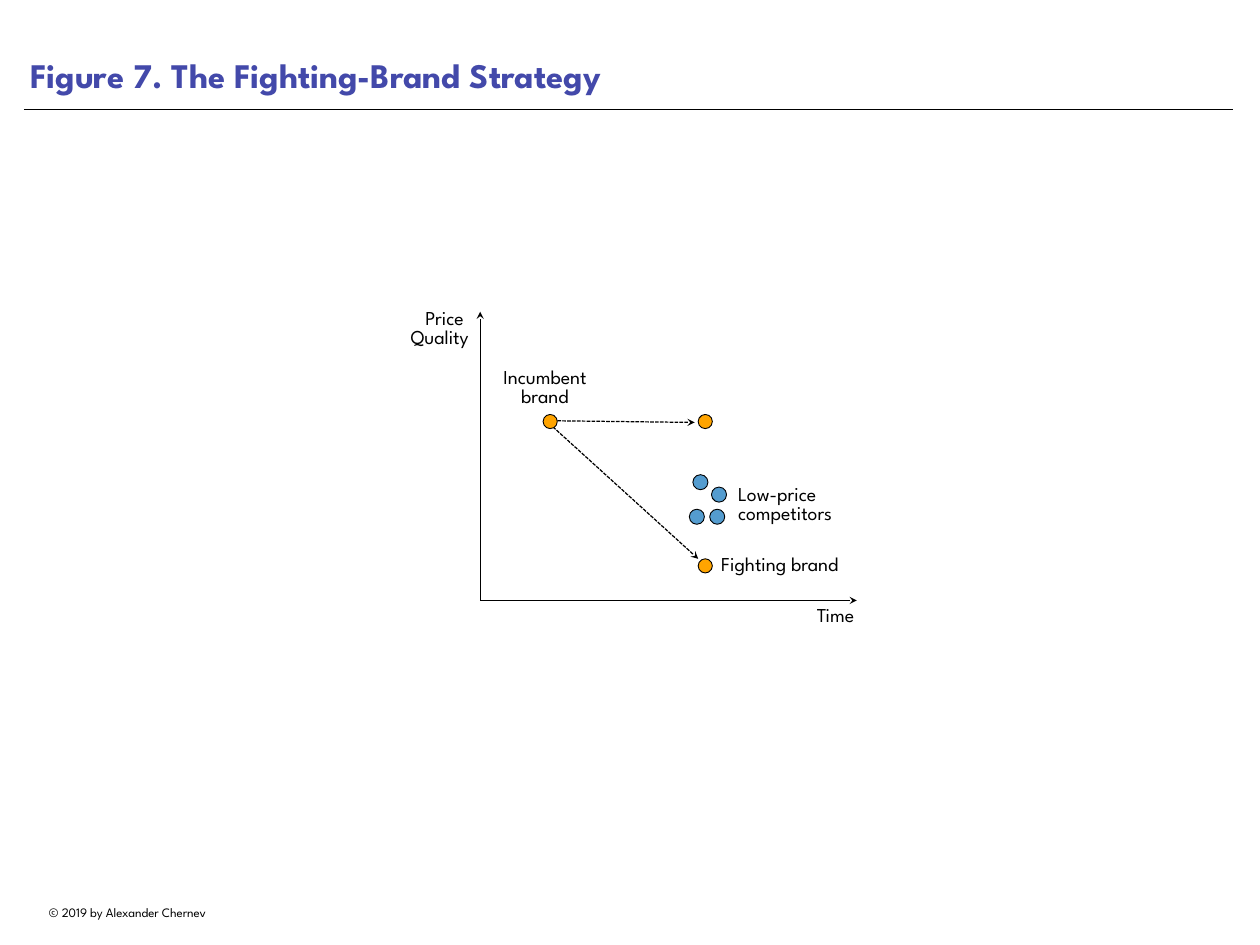
"""Build the fighting-brand strategy slide: a price-quality over time diagram."""
from dataclasses import dataclass

from lxml import etree
from pptx import Presentation
from pptx.dml.color import RGBColor
from pptx.enum.dml import MSO_LINE
from pptx.enum.shapes import MSO_CONNECTOR, MSO_SHAPE
from pptx.enum.text import MSO_ANCHOR, MSO_AUTO_SIZE, PP_ALIGN
from pptx.oxml.ns import qn
from pptx.util import Inches, Pt


@dataclass(frozen=True)
class Theme:
    font: str = "League Spartan"
    black: RGBColor = RGBColor(0x00, 0x00, 0x00)
    title_color: RGBColor = RGBColor(0x43, 0x49, 0xAA)
    brand_color: RGBColor = RGBColor(0xFF, 0xA4, 0x00)
    competitor_color: RGBColor = RGBColor(0x54, 0x9C, 0xCF)
    title_size: float = 28
    label_size: float = 16
    footer_size: float = 10.5


THEME = Theme()


def write_text(shape, text, size=THEME.label_size, color=THEME.black, bold=False,
               align=PP_ALIGN.LEFT, anchor=MSO_ANCHOR.TOP, spacing=0.8,
               inset=0, wrap=True):
    frame = shape.text_frame
    frame.auto_size = MSO_AUTO_SIZE.NONE
    frame.word_wrap = wrap
    frame.vertical_anchor = anchor
    frame.margin_left = frame.margin_right = Inches(inset)
    frame.margin_top = frame.margin_bottom = Inches(inset)
    frame.text = text
    for paragraph in frame.paragraphs:
        paragraph.alignment = align
        paragraph.line_spacing = spacing
        paragraph.space_before = Pt(0)
        font = paragraph.runs[0].font
        font.name = THEME.font
        font.size = Pt(size)
        font.bold = bold
        font.color.rgb = color


def draw_line(slide, start, end, width=1, dashed=False, arrow=True):
    connector = slide.shapes.add_connector(
        MSO_CONNECTOR.STRAIGHT, *map(Inches, start + end))
    connector.line.color.rgb = THEME.black
    connector.line.width = Pt(width)
    if dashed:
        connector.line.dash_style = MSO_LINE.SQUARE_DOT
    properties = connector._element.spPr
    if arrow:
        outline = properties.find(qn("a:ln"))
        etree.SubElement(outline, qn("a:tailEnd"), type="stealth")
    etree.SubElement(properties, qn("a:effectLst"))


presentation = Presentation()
presentation.slide_width = Inches(14.22)
presentation.slide_height = Inches(10.67)
slide = presentation.slides.add_slide(presentation.slide_layouts[5])

title = slide.shapes.title
title.left, title.top = Inches(0.27), Inches(0)
title.width, title.height = Inches(13.64), Inches(1.15)
write_text(title, "Figure 7. The Fighting-Brand Strategy", size=THEME.title_size,
           color=THEME.title_color, bold=True, anchor=MSO_ANCHOR.BOTTOM,
           spacing=1, inset=0.07)
draw_line(slide, (0.27, 1.24), (13.92, 1.24), width=0.5, arrow=False)

footer = slide.shapes.add_textbox(
    Inches(0.27), Inches(10.16), Inches(2.34), Inches(0.28))
write_text(footer, "© 2019 by Alexander Chernev", size=THEME.footer_size,
           align=PP_ALIGN.CENTER, spacing=1, inset=0.05, wrap=False)

origin = (5.42, 6.78)
draw_line(slide, origin, (5.42, 3.52))
draw_line(slide, origin, (9.67, 6.78))

labels = [
    ("Time", (8.92, 6.86, 0.72, 0.41), PP_ALIGN.RIGHT, MSO_ANCHOR.TOP),
    ("Price \nQuality", (4.43, 3.51, 0.86, 0.67), PP_ALIGN.RIGHT, MSO_ANCHOR.TOP),
    ("Incumbent brand", (5.42, 4.05, 1.46, 0.67), PP_ALIGN.CENTER, MSO_ANCHOR.MIDDLE),
    ("Fighting brand", (8.14, 6.21, 1.57, 0.36), PP_ALIGN.LEFT, MSO_ANCHOR.MIDDLE),
    ("Low-price competitors", (8.33, 5.45, 1.46, 0.52), PP_ALIGN.LEFT, MSO_ANCHOR.MIDDLE),
]
for text, box, align, anchor in labels:
    label = slide.shapes.add_textbox(*map(Inches, box))
    write_text(label, text, align=align, anchor=anchor)

draw_line(slide, (6.18, 4.75), (7.84, 4.77), dashed=True)
draw_line(slide, (6.24, 4.82), (7.88, 6.31), dashed=True)

marker_groups = [
    (THEME.competitor_color, 0.17, [(7.82, 5.36), (8.03, 5.5), (7.78, 5.75), (8.01, 5.75)]),
    (THEME.brand_color, 0.16, [(6.13, 4.68), (7.88, 6.31), (7.88, 4.68)]),
]
for color, diameter, positions in marker_groups:
    for left, top in positions:
        marker = slide.shapes.add_shape(
            MSO_SHAPE.OVAL, Inches(left), Inches(top), Inches(diameter), Inches(diameter))
        marker.shadow.inherit = False
        marker.fill.solid()
        marker.fill.fore_color.rgb = color
        marker.line.color.rgb = THEME.black
        marker.line.width = Pt(0.75)

presentation.save("out.pptx")
